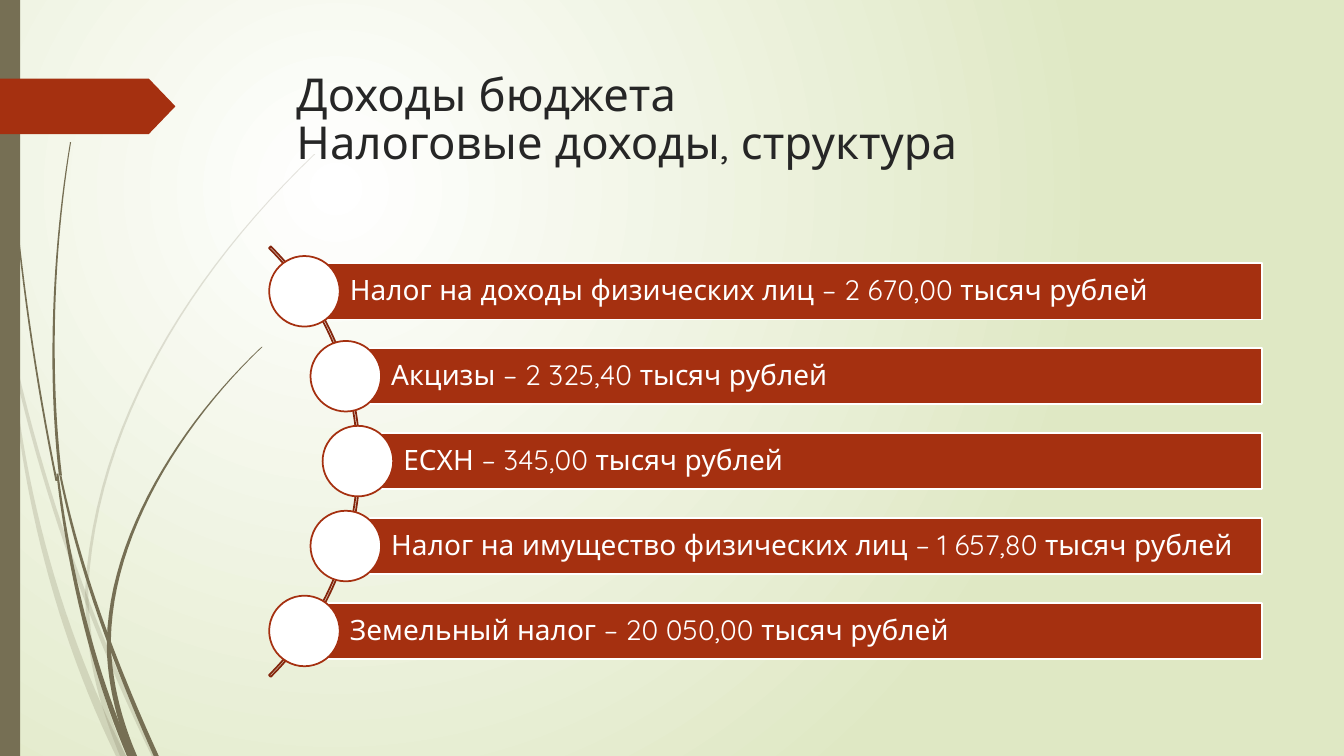
"""Build a slide listing the structure of tax revenue along an arc."""
from lxml.etree import SubElement
from pptx import Presentation
from pptx.dml.color import RGBColor
from pptx.enum.shapes import MSO_SHAPE
from pptx.enum.text import MSO_ANCHOR, PP_ALIGN
from pptx.oxml.ns import qn
from pptx.util import Inches, Pt

TITLE = "Доходы бюджета\vНалоговые доходы, структура"
TAXES = [
    (3.02, "Налог на доходы физических лиц – 2 670,00 тысяч рублей"),
    (3.43, "Акцизы – 2 325,40 тысяч рублей"),
    (3.55, "ЕСХН – 345,00 тысяч рублей"),
    (3.43, "Налог на имущество физических лиц – 1 657,80 тысяч рублей"),
    (3.02, "Земельный налог – 20 050,00 тысяч рублей"),
]
FONT = "Quicksand"
RUST, DARK_RUST, OLIVE, WHITE = "A53010", "84260D", "766F54", "FFFFFF"
BAR_RIGHT, BAR_HEIGHT, FIRST_TOP, LAST_TOP = 12.52, 0.56, 2.61, 5.98
CIRCLE_SIZE = 0.7
CURVE_STEPS = 24

# Each stalk: Bezier centre line, then its widths at the tip and at the root.
PALE_STALKS = [
    ([(0, 2.9), (0.3, 4.5), (0.8, 6), (1.53, 7.5)], 0.03, 0.05),
    ([(0.11, 3.5), (0.22, 4.9), (0.6, 6.3), (1.2, 7.5)], 0.01, 0.1),
    ([(3.12, 1.53), (1.9, 2.7), (0.95, 4.2), (0.86, 5.85)], 0.01, 0.03),
    ([(0.86, 5.85), (0.87, 6.4), (0.95, 6.85), (1.22, 7.5)], 0.03, 0.06),
]
DARK_STALKS = [
    ([(0.04, 0), (0.05, 1.6), (0.26, 3.3), (0.56, 4.77)], 0.01, 0.02),
    ([(0.57, 4.7), (0.68, 5.6), (0.9, 6.6), (1.29, 7.5)], 0.02, 0.06),
    ([(0.6, 4.72), (0.78, 5.6), (1.1, 6.5), (1.55, 7.5)], 0.02, 0.05),
    ([(0.7, 1.41), (0.52, 2.5), (0.48, 3.7), (0.6, 4.72)], 0.01, 0.03),
    ([(2.6, 3.44), (1.8, 4.2), (1.1, 5.3), (1.08, 6.36)], 0.01, 0.04),
    ([(1.08, 6.36), (1.08, 6.7), (1.16, 7.1), (1.33, 7.5)], 0.04, 0.06),
]


def color(value):
    return RGBColor.from_string(value)


def paint(shape, fill, line=None):
    shape.shadow.inherit = False
    if fill:
        shape.fill.solid()
        shape.fill.fore_color.rgb = color(fill)
    else:
        shape.fill.background()
    if line:
        shape.line.color.rgb = color(line)
        shape.line.width = Pt(1.25)
    else:
        shape.line.fill.background()


def add_box(slide, kind, box, fill, line=None):
    shape = slide.shapes.add_shape(kind, *map(Inches, box))
    paint(shape, fill, line)
    return shape


def add_stalk(slide, curve, tip_width, root_width, opacity):
    left_edge, right_edge = [], []
    for step in range(CURVE_STEPS + 1):
        t = step / CURVE_STEPS
        weights = ((1 - t) ** 3, 3 * t * (1 - t) ** 2, 3 * t * t * (1 - t), t ** 3)
        x, y = [sum(w * p for w, p in zip(weights, axis)) for axis in zip(*curve)]
        half_width = (tip_width + (root_width - tip_width) * t) / 2
        left_edge.append((Inches(x - half_width), Inches(y)))
        right_edge.append((Inches(x + half_width), Inches(y)))
    outline = left_edge + right_edge[::-1]
    builder = slide.shapes.build_freeform(*outline[0])
    builder.add_line_segments(outline[1:], close=True)
    stalk = builder.convert_to_shape()
    paint(stalk, OLIVE)
    if opacity < 100:
        fill_color = stalk.element.spPr.find(qn("a:solidFill"))[0]
        SubElement(fill_color, qn("a:alpha"), val=str(opacity * 1000))


def set_background(slide):
    fill = slide.background.fill
    fill.gradient()
    for stop, value in zip(fill.gradient_stops, (WHITE, "DFE8C4")):
        stop.color.rgb = color(value)
    gradient = next(slide.element.iter(qn("a:gradFill")))
    gradient.remove(gradient.find(qn("a:lin")))
    circle = SubElement(gradient, qn("a:path"), path="circle")
    SubElement(circle, qn("a:fillToRect"), l="50000", t="50000", r="100000", b="100000")


def format_text(frame, text, size, text_color, spacing):
    frame.text = text
    frame.word_wrap = True
    paragraph = frame.paragraphs[0]
    paragraph.alignment = PP_ALIGN.LEFT
    paragraph.line_spacing = spacing
    paragraph.font.name = FONT
    paragraph.font.size = Pt(size)
    paragraph.font.color.rgb = color(text_color)


def main():
    presentation = Presentation()
    presentation.slide_width, presentation.slide_height = Inches(13.33), Inches(7.5)
    slide = presentation.slides.add_slide(presentation.slide_layouts[5])
    set_background(slide)

    for stalks, opacity in ((PALE_STALKS, 20), (DARK_STALKS, 100)):
        for curve, tip_width, root_width in stalks:
            add_stalk(slide, curve, tip_width, root_width, opacity)
    add_box(slide, MSO_SHAPE.RECTANGLE, (0, 0, 0.2, 7.5), OLIVE)
    flag = add_box(slide, MSO_SHAPE.PENTAGON, (0, 0.78, 1.74, 0.55), RUST)
    flag.adjustments[0] = 0.48

    title = slide.shapes.title
    title.left, title.top, title.width, title.height = map(Inches, (2.84, 0.68, 9.75, 1.4))
    title.text_frame.vertical_anchor = MSO_ANCHOR.TOP
    format_text(title.text_frame, TITLE, 32.4, "262626", 0.88)

    arc = add_box(slide, MSO_SHAPE.BLOCK_ARC, (-2.47, 1.56, 6.04, 6.04), None, DARK_RUST)
    for index, value in enumerate((189, 27, 0.004)):
        arc.adjustments[index] = value

    pitch = (LAST_TOP - FIRST_TOP) / (len(TAXES) - 1)
    for index, (left, text) in enumerate(TAXES):
        top = FIRST_TOP + index * pitch
        bar = add_box(slide, MSO_SHAPE.RECTANGLE,
                      (left, top, BAR_RIGHT - left, BAR_HEIGHT), RUST, WHITE)
        frame = bar.text_frame
        frame.vertical_anchor = MSO_ANCHOR.MIDDLE
        frame.margin_left = Inches(0.45)
        frame.margin_top = frame.margin_right = frame.margin_bottom = Inches(0.06)
        format_text(frame, text, 20, WHITE, 0.9)
        circle_top = top + (BAR_HEIGHT - CIRCLE_SIZE) / 2
        add_box(slide, MSO_SHAPE.OVAL,
                (left - CIRCLE_SIZE / 2, circle_top, CIRCLE_SIZE, CIRCLE_SIZE), WHITE, RUST)

    presentation.save("out.pptx")


if __name__ == "__main__":
    main()
